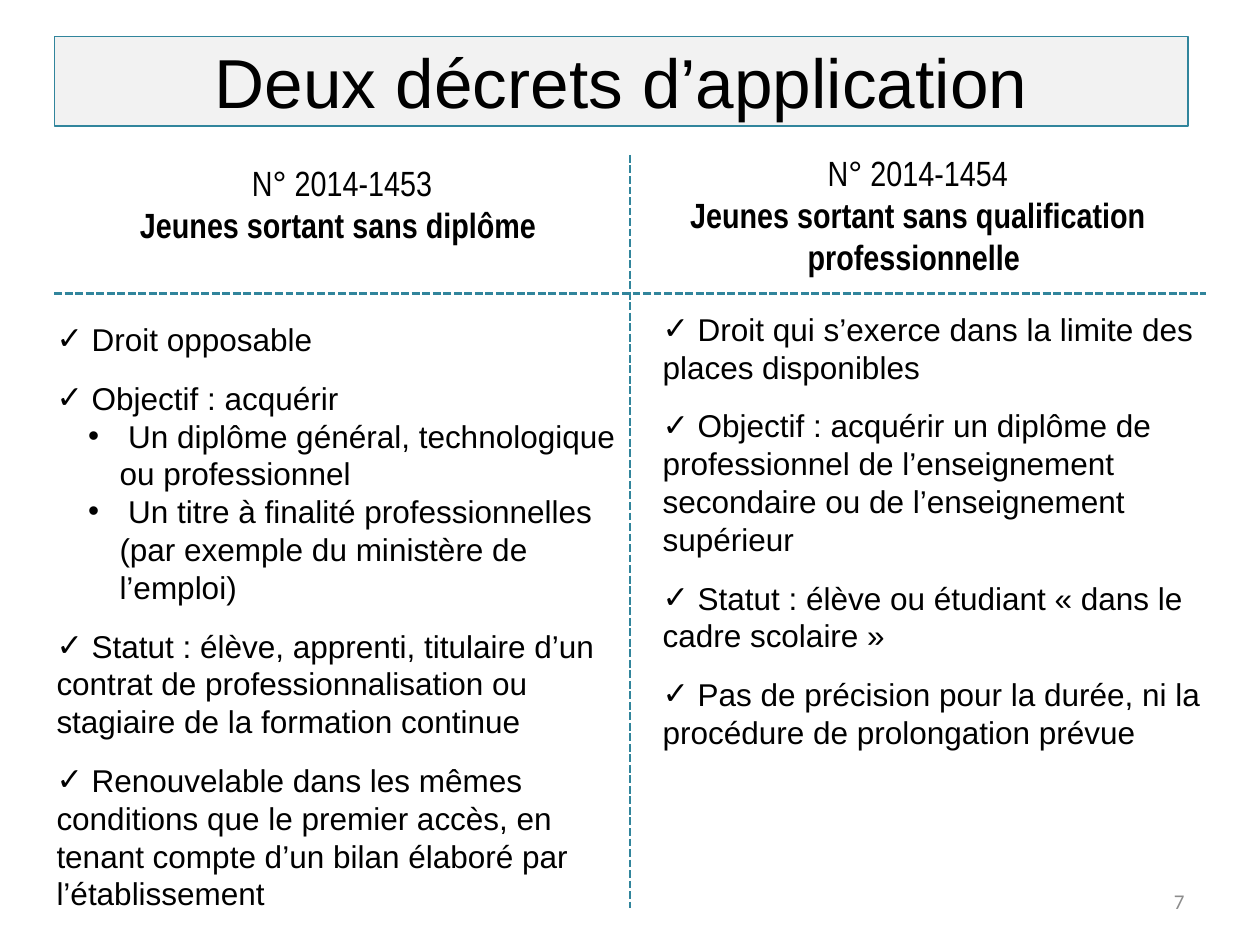
from lxml import etree
from pptx import Presentation
from pptx.dml.color import RGBColor
from pptx.enum.dml import MSO_LINE
from pptx.enum.shapes import MSO_CONNECTOR
from pptx.enum.text import MSO_ANCHOR, MSO_AUTO_SIZE, PP_ALIGN
from pptx.oxml.ns import qn
from pptx.util import Inches, Pt

BLACK = RGBColor(0, 0, 0)
GRAY = RGBColor(0x8C, 0x8C, 0x8C)
PALE = RGBColor(0xF2, 0xF2, 0xF2)
TEAL = RGBColor(0x31, 0x85, 0x9C)
CENTER, RIGHT = PP_ALIGN.CENTER, PP_ALIGN.RIGHT
MIDDLE, TOP = MSO_ANCHOR.MIDDLE, MSO_ANCHOR.TOP
NO_FIT = MSO_AUTO_SIZE.NONE
STRAIGHT = MSO_CONNECTOR.STRAIGHT
DASH = MSO_LINE.SQUARE_DOT

TITLE = {"name": "Arial", "size": Pt(39.6), "bold": False}
HEAD = {"name": "Arial Narrow", "size": Pt(20)}
BODY = {"name": "Arial", "size": Pt(18)}
NUMBER = {"name": "Calibri", "size": Pt(12)}

RULES = [((0.43, 2.33), (9.57, 2.33)), ((5, 1.23), (5, 7.21))]
HEADS = [
    ((0.67, 1.23, 4.09, 0.77), "N° 2014-1453", "Jeunes sortant sans diplôme "),
    ((5, 1.15, 4.57, 1.11), "N° 2014-1454",
     "Jeunes sortant sans qualification professionnelle "),
]
LISTS = [
    ((0.35, 2.49, 4.65, 4.85), [
        (0, "Droit opposable"),
        (0, "Objectif : acquérir"),
        (1, "Un diplôme général, technologique ou professionnel"),
        (1, "Un titre à finalité professionnelles (par exemple du "
            "ministère de l’emploi)"),
        (0, "Statut : élève, apprenti, titulaire d’un contrat de "
            "professionnalisation ou stagiaire de la formation continue"),
        (0, "Renouvelable dans les mêmes conditions que le premier accès, "
            "en tenant compte d’un bilan élaboré par l’établissement"),
    ]),
    ((5.16, 2.41, 4.49, 3.64), [
        (0, "Droit qui s’exerce dans la limite des places disponibles"),
        (0, "Objectif : acquérir un diplôme de professionnel de "
            "l’enseignement secondaire ou de l’enseignement supérieur"),
        (0, "Statut : élève ou étudiant « dans le cadre scolaire »"),
        (0, "Pas de précision pour la durée, ni la procédure de "
            "prolongation prévue"),
    ]),
]


def style(run, form, color=BLACK):
    for key, value in form.items():
        setattr(run.font, key, value)
    run.font.color.rgb = color


def add_title(slide, text):
    title = slide.shapes.title
    place = {"left": 0.43, "top": 0.29, "width": 9, "height": 0.71}
    for key, value in place.items():
        setattr(title, key, Inches(value))
    title.fill.solid()
    title.fill.fore_color.rgb = PALE
    title.line.color.rgb = TEAL
    title.line.width = Pt(0.75)
    frame = title.text_frame
    frame.auto_size = NO_FIT
    frame.vertical_anchor = MIDDLE
    para = frame.paragraphs[0]
    para.alignment = CENTER
    run = para.add_run()
    run.text = text
    style(run, TITLE)


def add_rule(slide, start, end):
    rule = slide.shapes.add_connector(STRAIGHT, *map(Inches, start + end))
    rule.line.color.rgb = TEAL
    rule.line.width = Pt(1.5)
    rule.line.dash_style = DASH
    etree.SubElement(rule.element.spPr, qn("a:effectLst"))


def add_text(slide, box, lines, form, align=None, color=BLACK, anchor=TOP):
    frame = slide.shapes.add_textbox(*map(Inches, box)).text_frame
    frame.word_wrap = True
    frame.vertical_anchor = anchor
    for i, line in enumerate(lines):
        para = frame.add_paragraph() if i else frame.paragraphs[0]
        para.alignment = align
        run = para.add_run()
        run.text = line
        style(run, form, color)
    return frame.paragraphs


def add_head(slide, box, code, group):
    paras = add_text(slide, box, [code, group], HEAD, CENTER)
    paras[1].runs[0].font.bold = True


def set_bullet(para, level):
    para.level = level
    if level == 0:
        para.space_before = Pt(12)
    props = para._p.get_or_add_pPr()
    props.set("marL", str(Inches(0.5 * level)))
    props.set("indent", str(Inches(-0.25 * level)))
    etree.SubElement(props, qn("a:buFont")).set("typeface", "Arial")
    etree.SubElement(props, qn("a:buChar")).set("char", "✓•"[level])


def add_list(slide, box, items):
    paras = add_text(slide, box, [" " + text for _, text in items], BODY)
    for para, (level, _) in zip(paras, items):
        set_bullet(para, level)


def main():
    deck = Presentation()
    deck.slide_width, deck.slide_height = Inches(10), Inches(7.5)
    slide = deck.slides.add_slide(deck.slide_layouts[5])
    add_title(slide, "Deux décrets d’application")
    for start, end in RULES:
        add_rule(slide, start, end)
    for head in HEADS:
        add_head(slide, *head)
    for box, items in LISTS:
        add_list(slide, box, items)
    add_text(slide, (7.17, 6.95, 2.33, 0.4), ["7"], NUMBER, RIGHT, GRAY, MIDDLE)
    deck.save("out.pptx")


if __name__ == "__main__":
    main()
